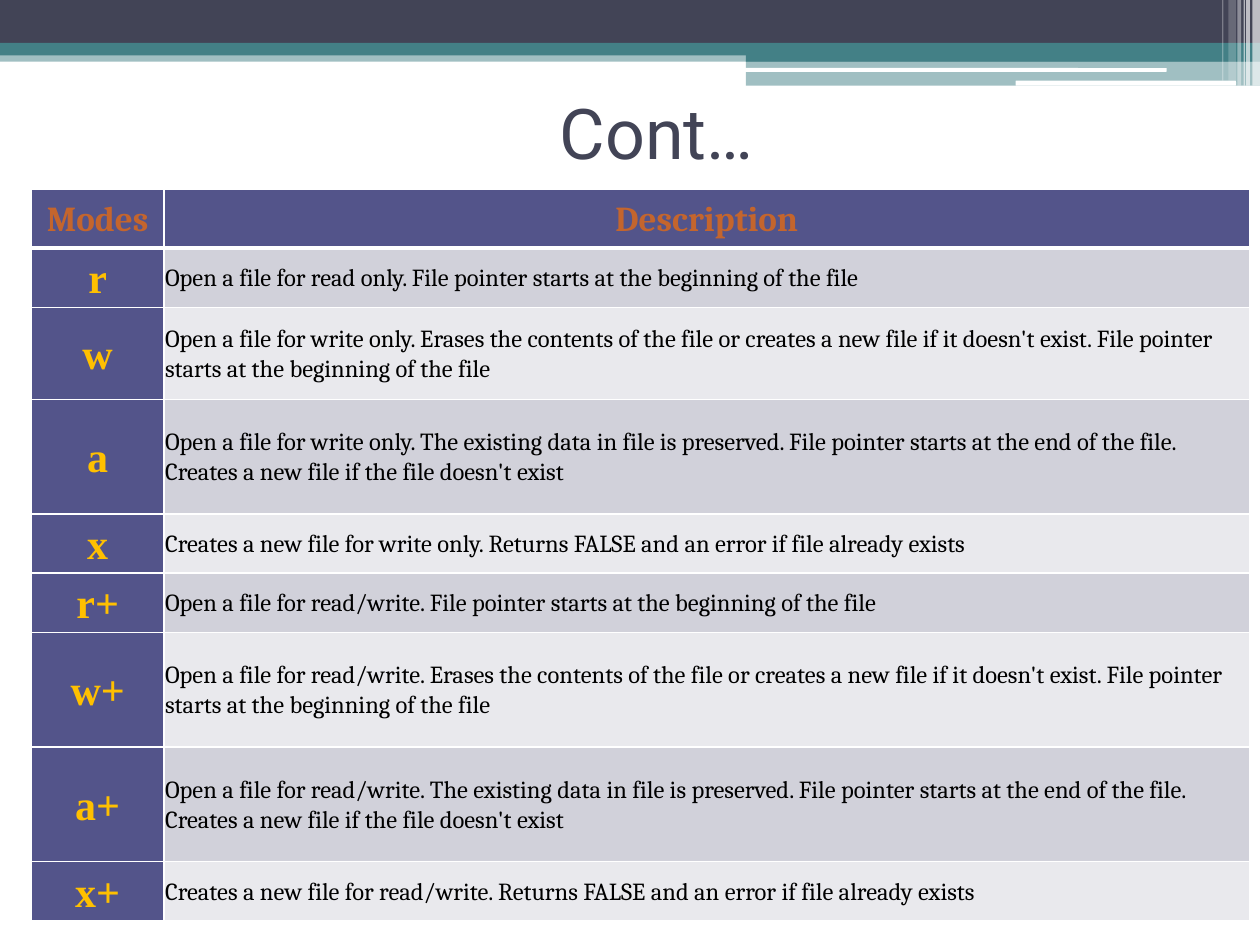
from lxml import etree
from pptx import Presentation
from pptx import util as u
from pptx.dml.color import RGBColor
from pptx.enum import shapes, text
from pptx.oxml import ns

WHITE = RGBColor(0xFF, 0xFF, 0xFF)
BLACK = RGBColor(0, 0, 0)
NAVY = RGBColor(0x42, 0x44, 0x56)
TEAL = RGBColor(0x43, 0x80, 0x86)
INDIGO = RGBColor(0x53, 0x54, 0x8A)
ORANGE = RGBColor(0xC4, 0x65, 0x2D)
GOLD = RGBColor(0xFF, 0xC0, 0x00)
BANDS = (RGBColor(0xD1, 0xD1, 0xDA), RGBColor(0xE9, 0xE9, 0xED))

WIDTH, HEIGHT = u.Inches(10), u.Inches(7.5)
COL, ROW = WIDTH // 1000, HEIGHT // 750

BARS = [
    (0, 40, 1000, 9, TEAL, 50),
    (0, 0, 1000, 34, NAVY, 100),
    (0, 34, 1000, 10, TEAL, 100),
    (592, 39, 408, 10, TEAL, 100),
    (592, 48, 408, 20, TEAL, 50),
]
LINES = [(591, 54, 335, 3, WHITE, 100), (806, 64, 175, 4, WHITE, 100)]
STRIPES = [(994, 6, 68, 65), (989, 3, 68, 65), (987, 1, 68, 60),
           (982, 3, 68, 40), (975, 6, 64, 20), (970, 1, 64, 30)]

HEADER = ("Modes", "Description")
MODES = [
    ("r", "Open a file for read only. File pointer starts at the beginning of the file", 47),
    ("w", "Open a file for write only. Erases the contents of the file or creates a new file "
          "if it doesn't exist. File pointer starts at the beginning of the file", 73),
    ("a", "Open a file for write only. The existing data in file is preserved. File pointer "
          "starts at the end of the file. Creates a new file if the file doesn't exist", 91),
    ("x", "Creates a new file for write only. Returns FALSE and an error if file already exists", 47),
    ("r+", "Open a file for read/write. File pointer starts at the beginning of the file", 47),
    ("w+", "Open a file for read/write. Erases the contents of the file or creates a new file "
           "if it doesn't exist. File pointer starts at the beginning of the file", 91),
    ("a+", "Open a file for read/write. The existing data in file is preserved. File pointer "
           "starts at the end of the file. Creates a new file if the file doesn't exist", 91),
    ("x+", "Creates a new file for read/write. Returns FALSE and an error if file already exists", 47),
]
HEAD_FONT = dict(size=u.Pt(20), name="Cambria", bold=True)
MODE_FONT = dict(size=u.Pt(24), name="Times New Roman", bold=True)
BODY_FONT = dict(size=u.Pt(14), name="Cambria", bold=False)
TITLE_FONT = dict(size=u.Pt(40), name="Roboto", bold=False)
CELL = dict(vertical_anchor=text.MSO_ANCHOR.MIDDLE, margin_left=COL,
            margin_right=COL, margin_top=ROW, margin_bottom=ROW)


def set_all(obj, values):
    for key, value in values.items():
        setattr(obj, key, value)


def to_grid(x, y, w, h):
    return x * COL, y * ROW, w * COL, h * ROW


def write(tf, content, font, color, align):
    p = tf.paragraphs[0]
    p.alignment = align
    r = p.add_run()
    r.text = content
    set_all(r.font, font)
    r.font.color.rgb = color
    return p


def add_bar(s, kind, box, color, alpha):
    sp = s.shapes.add_shape(kind, *to_grid(*box))
    sp.shadow.inherit = False
    sp.fill.solid()
    sp.fill.fore_color.rgb = color
    sp.line.fill.background()
    if alpha < 100:
        clr = sp.fill._xPr.find(".//" + ns.qn("a:srgbClr"))
        etree.SubElement(clr, ns.qn("a:alpha"), val=str(alpha * 1000))


def add_band(s, x, y):
    stripes = [(left, 0, w, h, WHITE, alpha) for left, w, h, alpha in STRIPES]
    kinds = shapes.MSO_SHAPE
    for kind, bars in ((kinds.RECTANGLE, BARS), (kinds.ROUNDED_RECTANGLE, LINES),
                       (kinds.RECTANGLE, stripes)):
        for left, top, w, h, color, alpha in bars:
            add_bar(s, kind, (x + left, y + top, w, h), color, alpha)


def add_title(s, box, content):
    sp = s.shapes.title
    sp.left, sp.top, sp.width, sp.height = to_grid(*box)
    tf = sp.text_frame
    set_all(tf, dict(word_wrap=True, vertical_anchor=text.MSO_ANCHOR.MIDDLE))
    write(tf, content, TITLE_FONT, NAVY, text.PP_ALIGN.CENTER)


def add_borders(cell, bottom):
    tcPr = cell._tc.get_or_add_tcPr()
    for side, width in (("L", 1), ("R", 1), ("T", 1), ("B", bottom)):
        ln = etree.SubElement(tcPr, ns.qn("a:ln" + side), w=str(u.Pt(width)))
        fill = etree.SubElement(ln, ns.qn("a:solidFill"))
        etree.SubElement(fill, ns.qn("a:srgbClr"), val=str(WHITE))


def fill_cell(cell, content, font, color, align, fill, bottom=1):
    set_all(cell, CELL)
    add_borders(cell, bottom)
    cell.fill.solid()
    cell.fill.fore_color.rgb = fill
    p = write(cell.text_frame, content, font, color, align)
    p.line_spacing = 1.07


def add_modes_table(s, box, mode_width, header_height):
    table = s.shapes.add_table(len(MODES) + 1, 2, *to_grid(*box)).table
    for column, width in zip(table.columns, (mode_width, box[2] - mode_width)):
        column.width = width * COL
    heights = [header_height] + [height for _, _, height in MODES]
    for row, height in zip(table.rows, heights):
        row.height = height * ROW
    center, left = text.PP_ALIGN.CENTER, text.PP_ALIGN.LEFT
    for i, label in enumerate(HEADER):
        fill_cell(table.cell(0, i), label, HEAD_FONT, ORANGE, center, INDIGO, 3)
    for i, (mode, description, _) in enumerate(MODES):
        fill_cell(table.cell(i + 1, 0), mode, MODE_FONT, GOLD, center, INDIGO)
        fill_cell(table.cell(i + 1, 1), description, BODY_FONT, BLACK, left, BANDS[i % 2])


def main():
    prs = Presentation()
    prs.slide_width, prs.slide_height = WIDTH, HEIGHT
    s = prs.slides.add_slide(prs.slide_layouts[5])
    add_band(s, 0, 0)
    add_title(s, (50, 58, 942, 92), "Cont…")
    add_modes_table(s, (25, 150, 967, 583), 105, 47)
    prs.save("out.pptx")


if __name__ == "__main__":
    main()
